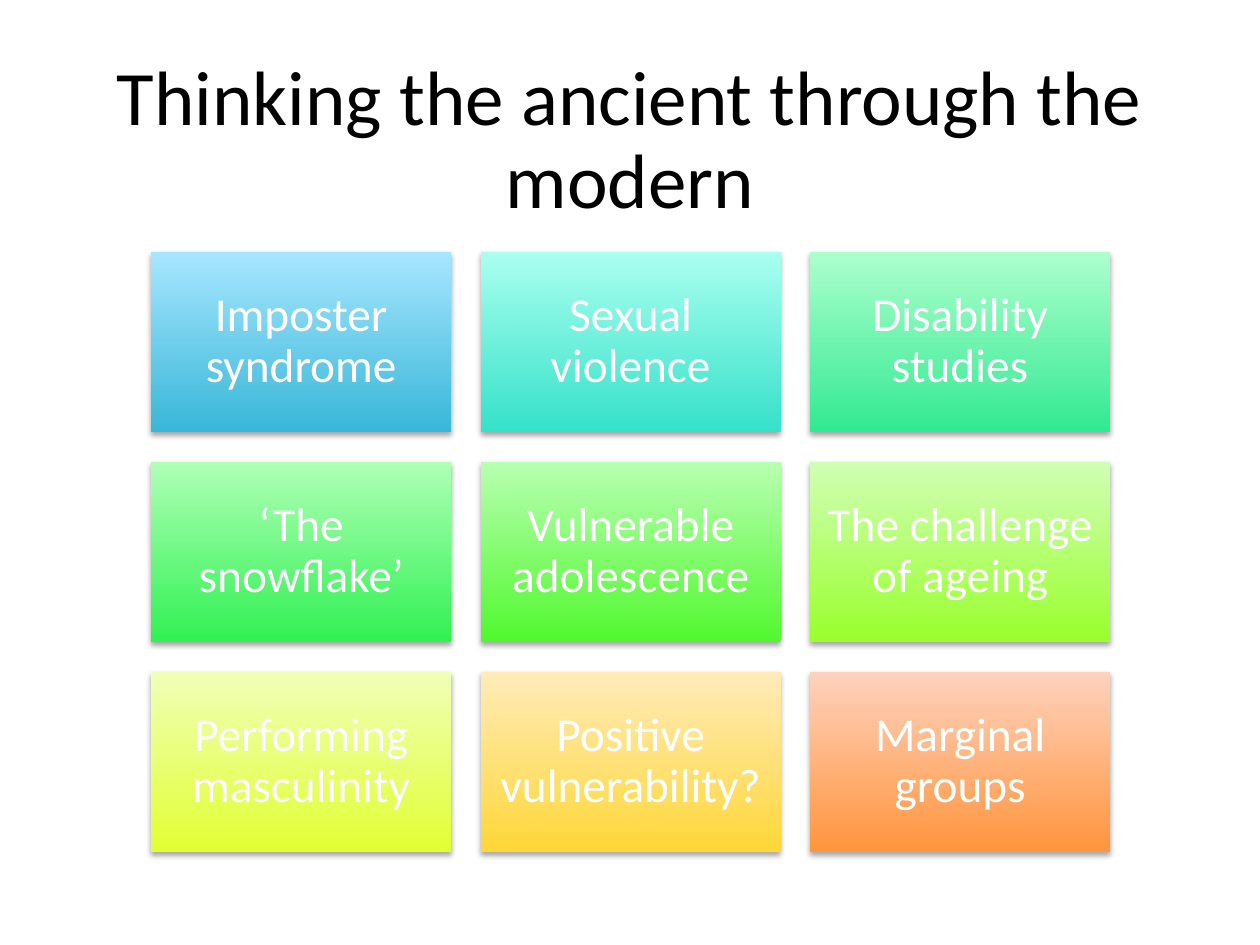
from lxml.etree import SubElement
from pptx import Presentation
from pptx.dml.color import RGBColor
from pptx.enum.shapes import MSO_SHAPE
from pptx.enum.text import MSO_ANCHOR, PP_ALIGN
from pptx.oxml.ns import qn
from pptx.util import Inches, Pt

FONT = "Calibri"
BLACK = RGBColor(0x00, 0x00, 0x00)
WHITE = RGBColor(0xFF, 0xFF, 0xFF)
COLUMNS = 3
TILE_WIDTH, TILE_HEIGHT, GAP = 2.38, 1.43, 0.235
TOPICS = [
    ("Imposter syndrome", RGBColor(0x39, 0xB7, 0xD8), RGBColor(0xA7, 0xE6, 0xFF)),
    ("Sexual violence", RGBColor(0x36, 0xE1, 0xCA), RGBColor(0xAA, 0xFF, 0xEF)),
    ("Disability studies", RGBColor(0x33, 0xE9, 0x92), RGBColor(0xAD, 0xFF, 0xCD)),
    ("‘The snowflake’", RGBColor(0x31, 0xF1, 0x53), RGBColor(0xB0, 0xFF, 0xB7)),
    ("Vulnerable adolescence", RGBColor(0x51, 0xF8, 0x2F), RGBColor(0xB9, 0xFF, 0xB2)),
    ("The challenge of ageing", RGBColor(0x99, 0xFF, 0x2E), RGBColor(0xD1, 0xFF, 0xB5)),
    ("Performing masculinity", RGBColor(0xE2, 0xFF, 0x33), RGBColor(0xF0, 0xFF, 0xB8)),
    ("Positive vulnerability?", RGBColor(0xFF, 0xD7, 0x38), RGBColor(0xFF, 0xEB, 0xBA)),
    ("Marginal groups", RGBColor(0xFF, 0x95, 0x3E), RGBColor(0xFF, 0xD2, 0xBD)),
]


def write_text(shape, text, *, size, color, inset):
    """Write centred, wrapped text into a shape."""
    frame = shape.text_frame
    frame.word_wrap = True
    frame.vertical_anchor = MSO_ANCHOR.MIDDLE
    frame.margin_left = frame.margin_right = Inches(inset)
    frame.margin_top = frame.margin_bottom = Inches(inset)
    para = frame.paragraphs[0]
    para.alignment = PP_ALIGN.CENTER
    para.line_spacing = 0.9
    span = para.add_run()
    span.text = text
    span.font.name = FONT
    span.font.size = Pt(size)
    span.font.color.rgb = color


def add_soft_shadow(shape):
    """Give a shape a soft shadow that falls straight down."""
    shape.shadow.inherit = False
    effects = shape._element.spPr.find(qn("a:effectLst"))
    shadow = SubElement(effects, qn("a:outerShdw"), blurRad=str(Pt(3.1)),
                        dist=str(Pt(1.8)), dir="5400000", rotWithShape="0")
    color = SubElement(shadow, qn("a:srgbClr"), val=str(BLACK))
    SubElement(color, qn("a:alpha"), val="35000")


def add_title(page, text, left, top, width, height):
    """Place the slide title in the given box."""
    box = page.shapes.add_textbox(Inches(left), Inches(top), Inches(width), Inches(height))
    write_text(box, text, size=44, color=BLACK, inset=0.1)


def add_tile(page, topic, left, top, width, height):
    """Place one gradient tile with its topic in the given box."""
    text, bottom_color, top_color = topic
    tile = page.shapes.add_shape(MSO_SHAPE.RECTANGLE, Inches(left), Inches(top),
                                 Inches(width), Inches(height))
    tile.fill.gradient()
    tile.fill.gradient_angle = 90
    for stop, color, position in zip(tile.fill.gradient_stops,
                                     (bottom_color, top_color), (0, 1)):
        stop.color.rgb = color
        stop.position = position
    tile.line.fill.background()
    add_soft_shadow(tile)
    write_text(tile, text, size=27, color=WHITE, inset=0.11)


def add_topic_grid(page, topics, left, top):
    """Lay the topics out in rows from the given corner."""
    for index, topic in enumerate(topics):
        row, column = divmod(index, COLUMNS)
        add_tile(page, topic, left + column * (TILE_WIDTH + GAP),
                 top + row * (TILE_HEIGHT + GAP), TILE_WIDTH, TILE_HEIGHT)


def main():
    """Build the deck and save it."""
    deck = Presentation()
    deck.slide_width, deck.slide_height = Inches(10), Inches(7.5)
    page = deck.slides.add_slide(deck.slide_layouts[6])
    add_title(page, "Thinking the ancient through the modern", 0.69, 0.4, 8.62, 1.45)
    add_topic_grid(page, TOPICS, 1.2, 2)
    deck.save("out.pptx")


if __name__ == "__main__":
    main()
